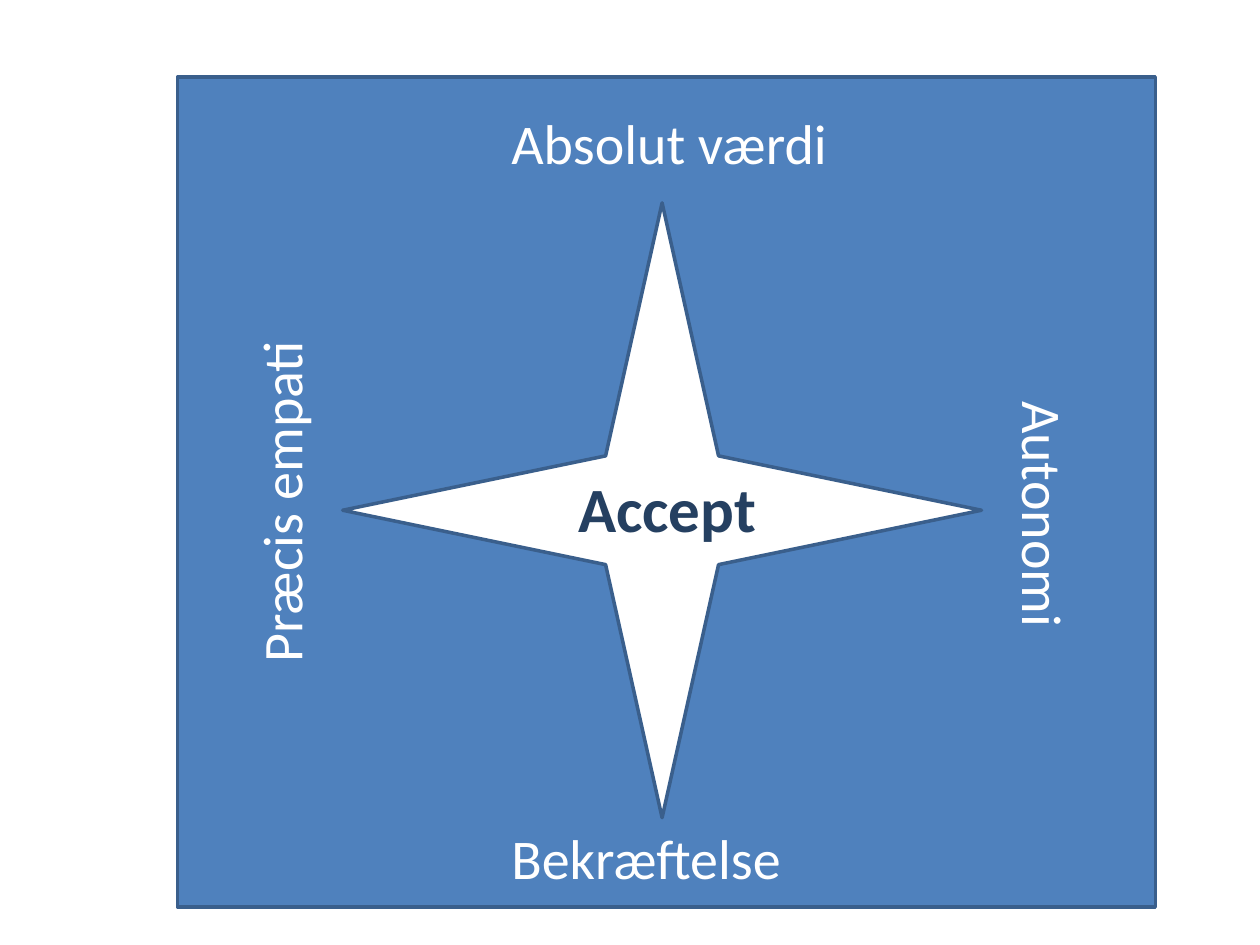
from pptx import Presentation
from pptx.dml.color import RGBColor
from pptx.enum.shapes import MSO_SHAPE
from pptx.enum.text import MSO_AUTO_SIZE
from pptx.util import Inches, Pt

RECTANGLE, STAR = MSO_SHAPE.RECTANGLE, MSO_SHAPE.STAR_4_POINT
GROW = MSO_AUTO_SIZE.SHAPE_TO_FIT_TEXT
BLUE, EDGE, NAVY, WHITE = "4F81BD", "3A5F8C", "254061", "FFFFFF"

# Boxes are left, top, width, height in inches
FIGURES = [
    (RECTANGLE, (1.41, 0.61, 7.76, 6.59), BLUE),
    (STAR, (2.72, 1.61, 5.07, 4.88), WHITE),
]
# text, box, rotation, size, colour, bold
LABELS = [
    ("Accept", (4.49, 3.68, 1.86, 0.71), 0, 36, NAVY, True),
    ("Absolut værdi", (3.96, 0.81, 2.95, 0.64), 0, 32, WHITE, False),
    ("Autonomi", (7.15, 3.9, 2.27, 0.64), 90, 32, WHITE, False),
    ("Præcis empati", (0.75, 3.56, 2.95, 0.64), 270, 32, WHITE, False),
    ("Bekræftelse", (3.96, 6.49, 2.95, 0.64), 0, 32, WHITE, False),
]


def colour(value):
    return RGBColor.from_string(value)


def add_figure(slide, preset, box, fill):
    figure = slide.shapes.add_shape(preset, *map(Inches, box))
    figure.shadow.inherit = False
    figure.fill.solid()
    figure.fill.fore_color.rgb = colour(fill)
    figure.line.color.rgb = colour(EDGE)
    figure.line.width = Pt(2)


def add_label(slide, text, box, rotation, size, ink, bold):
    label = slide.shapes.add_textbox(*map(Inches, box))
    label.rotation = rotation
    frame = label.text_frame
    frame.word_wrap = True
    frame.auto_size = GROW
    paragraph = frame.paragraphs[0]
    paragraph.text = text
    font = paragraph.font
    font.name, font.size, font.bold = "Calibri", Pt(size), bold
    font.color.rgb = colour(ink)


def main():
    deck = Presentation()
    deck.slide_width, deck.slide_height = Inches(10), Inches(7.5)
    slide = deck.slides.add_slide(deck.slide_layouts[6])
    for figure in FIGURES:
        add_figure(slide, *figure)
    for label in LABELS:
        add_label(slide, *label)
    deck.save("out.pptx")


if __name__ == "__main__":
    main()
